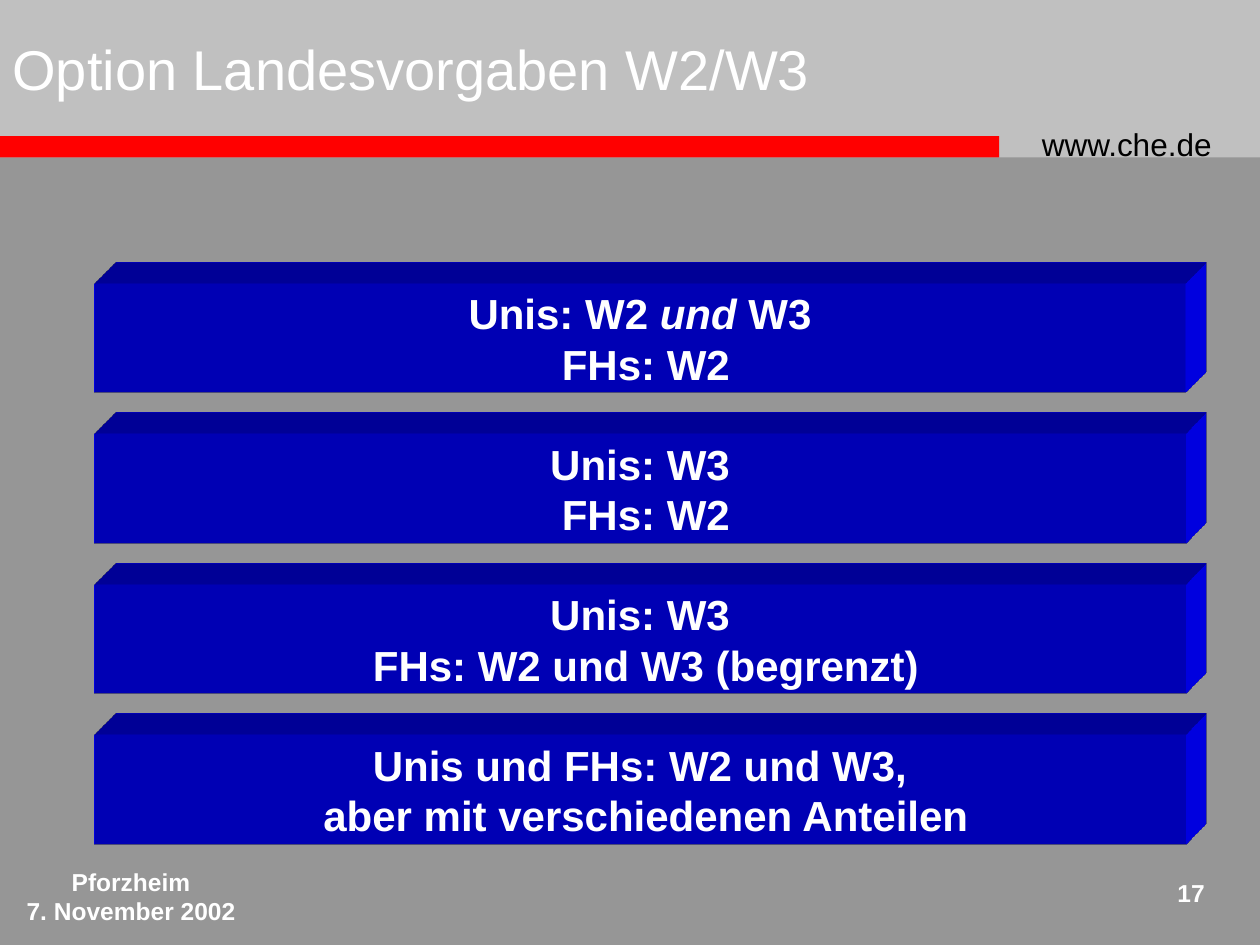
from lxml import etree
from pptx import Presentation
from pptx.dml.color import RGBColor
from pptx.enum.shapes import MSO_SHAPE
from pptx.enum.text import MSO_ANCHOR, PP_ALIGN
from pptx.util import Inches, Pt

RECT = MSO_SHAPE.RECTANGLE
LEFT, CENTER, RIGHT = PP_ALIGN.LEFT, PP_ALIGN.CENTER, PP_ALIGN.RIGHT
TOP, MIDDLE = MSO_ANCHOR.TOP, MSO_ANCHOR.MIDDLE

THEME = {
    "font": "Arial",
    "background": "969696", "header": "C0C0C0", "stripe": "FF0000",
    "bar": "0000FF", "light": "FFFFFF", "dark": "000000",
    "title": 32, "option": 24, "site": 18, "footer": 14,
}
EXTRUSION = """<root xmlns:a="http://schemas.openxmlformats.org/drawingml/2006/main">
<a:scene3d><a:camera prst="legacyObliqueTopRight"/><a:lightRig rig="legacyFlat3" dir="b"/></a:scene3d>
<a:sp3d extrusionH="430200" prstMaterial="legacyMatte">
<a:bevelT w="13500" h="13500" prst="angle"/><a:bevelB w="13500" h="13500" prst="angle"/>
<a:extrusionClr><a:srgbClr val="0000FF"/></a:extrusionClr></a:sp3d></root>"""

prs = Presentation()
prs.slide_width, prs.slide_height = Inches(10), Inches(7.5)
s = prs.slides.add_slide(prs.slide_layouts[6])
s.background.fill.solid()
s.background.fill.fore_color.rgb = RGBColor.from_string(THEME["background"])


def add_box(x, y, w, h, fill):
    sp = s.shapes.add_shape(RECT, Inches(x), Inches(y), Inches(w), Inches(h))
    sp.shadow.inherit = False
    sp.fill.solid()
    sp.fill.fore_color.rgb = RGBColor.from_string(THEME[fill])
    sp.line.fill.background()
    return sp


def write(sp, lines, size, color="light", align=LEFT, anchor=TOP, wrap=True, bold=True):
    """Fill a shape with lines, each a list of runs; every second run is italic."""
    tf = sp.text_frame
    tf.word_wrap, tf.vertical_anchor = wrap, anchor
    for i, runs in enumerate(lines):
        p = tf.paragraphs[0] if i == 0 else tf.add_paragraph()
        p.alignment = align
        for j, text in enumerate(runs):
            r = p.add_run()
            r.text = text
            style = {"name": THEME["font"], "size": Pt(THEME[size]),
                     "bold": bold, "italic": j % 2 == 1}
            for name, value in style.items():
                setattr(r.font, name, value)
            r.font.color.rgb = RGBColor.from_string(THEME[color])


# Header band and stripe
HEADER_H, STRIPE_H = 1.25, 0.17
add_box(0, 0, 10, HEADER_H, "header")
add_box(0, HEADER_H - STRIPE_H, 7.93, STRIPE_H, "stripe")

# Title, web address and footer
labels = [
    ((8.17, 0.94, 1.75, 0.4), [["www.che.de"]], {"size": "site", "color": "dark", "bold": False}),
    ((0, 6.83, 2.08, 0.5), [["Pforzheim"], ["7. November 2002"]], {"size": "footer", "align": CENTER}),
    ((9.08, 6.92, 0.58, 0.42), [["17"]], {"size": "footer", "align": RIGHT}),
    ((0, 0, 8.08, 1.08), [["Option Landesvorgaben W2/W3"]],
     {"size": "title", "anchor": MIDDLE, "bold": False}),
]
for place, lines, style in labels:
    write(s.shapes.add_textbox(*map(Inches, place)), lines, **style)

# Extruded option bars
BAR_X, BAR_Y, BAR_W, BAR_H, BAR_PITCH = 0.75, 2.25, 8.66, 0.87, 1.194
options = [
    [["Unis: W2 ", "und", " W3"], [" FHs: W2"]],
    [["Unis: W3"], [" FHs: W2"]],
    [["Unis: W3"], [" FHs: W2 und W3 (begrenzt)"]],
    [["Unis und FHs: W2 und W3,"], [" aber mit verschiedenen Anteilen"]],
]
for row, lines in enumerate(options):
    bar = add_box(BAR_X, BAR_Y + row * BAR_PITCH, BAR_W, BAR_H, "bar")
    bar.element.spPr.extend(list(etree.fromstring(EXTRUSION)))
    write(bar, lines, "option", align=CENTER, anchor=MIDDLE, wrap=False)

prs.save("out.pptx")
